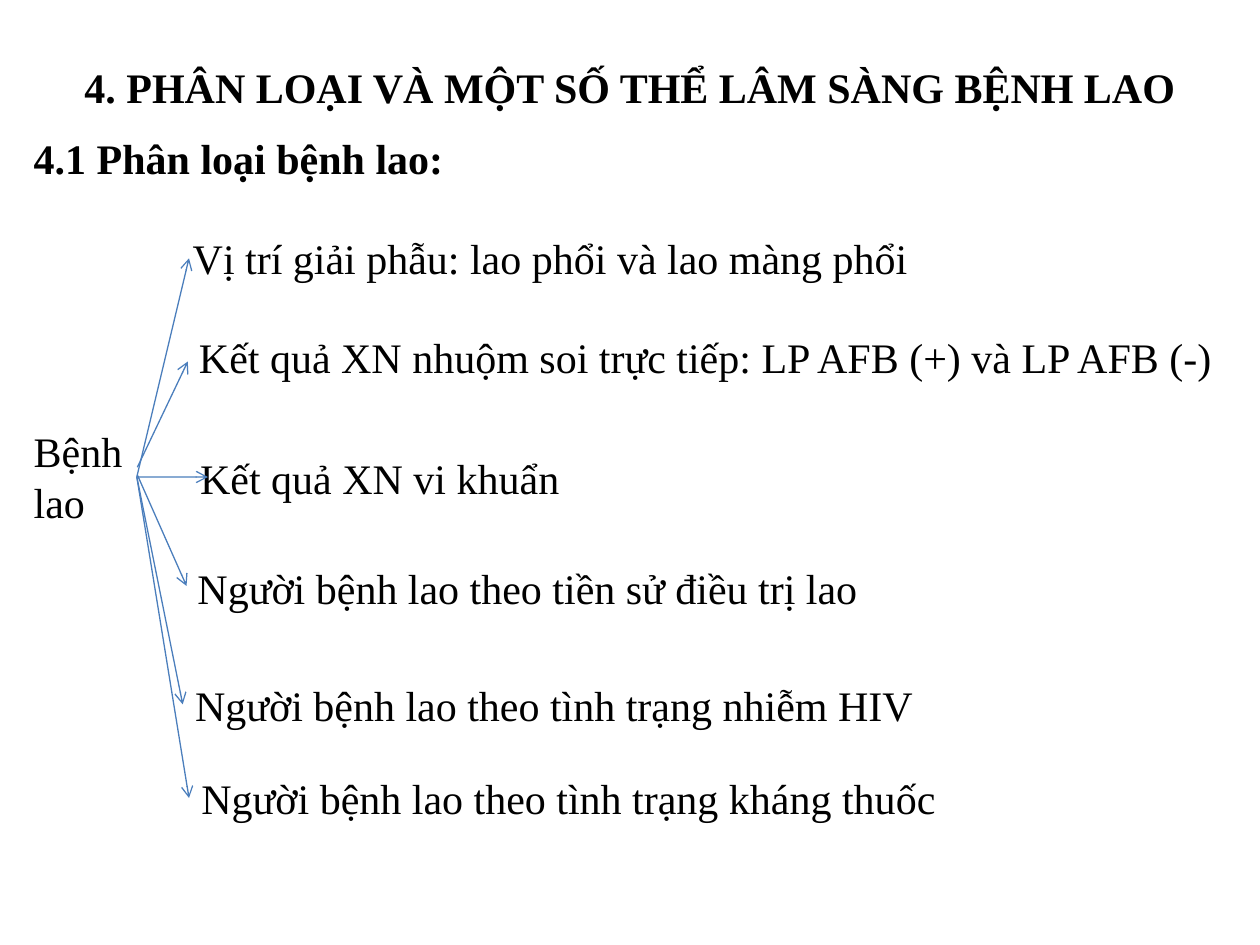
from lxml import etree
from pptx import Presentation
from pptx.dml.color import RGBColor
from pptx.enum.shapes import MSO_CONNECTOR
from pptx.enum.text import MSO_ANCHOR, MSO_AUTO_SIZE, PP_ALIGN
from pptx.oxml.ns import qn
from pptx.util import Pt

STRAIGHT = MSO_CONNECTOR.STRAIGHT
TOP, MIDDLE = MSO_ANCHOR.TOP, MSO_ANCHOR.MIDDLE
LEFT, CENTER = PP_ALIGN.LEFT, PP_ALIGN.CENTER
LEFT_SIDE, RIGHT_SIDE = 1, 3
TITLE_ONLY = 5

# Content
TITLE = "4. PHÂN LOẠI VÀ MỘT SỐ THỂ LÂM SÀNG BỆNH LAO"
SUBTITLE = "4.1 Phân loại bệnh lao:"
ROOT = "Bệnh lao"
# text, left, top, width, free arrow start and tip (None: joined to the box)
CRITERIA = [
    ("Vị trí giải phẫu: lao phổi và lao màng phổi", 103, 129.6, 480, None, (108, 147.6)),
    ("Kết quả XN nhuộm soi trực tiếp: LP AFB (+) và LP AFB (-)", 106.6, 185.8, 606,
     (78.5, 267), (107.3, 206.6)),
    ("Kết quả XN vi khuẩn", 107.3, 254.9, 546, None, (118.8, 272.6)),
    ("Người bệnh lao theo tiền sử điều trị lao", 105.8, 318.2, 504,
     (78.5, 271.4), (106.6, 334.8)),
    ("Người bệnh lao theo tình trạng nhiễm HIV", 104.4, 384.5, 534, None, None),
    ("Người bệnh lao theo tình trạng kháng thuốc", 108, 438, 516, None, None),
]
ROW_HEIGHT = 36
BLACK, BLUE = "000000", "4B7EBC"


def color(value):
    return RGBColor.from_string(value)


def write_text(shape, text, bold=False, align=LEFT, anchor=TOP):
    frame = shape.text_frame
    frame.word_wrap = True
    frame.auto_size = MSO_AUTO_SIZE.NONE
    frame.vertical_anchor = anchor
    paragraph = frame.paragraphs[0]
    paragraph.alignment = align
    run = paragraph.add_run()
    run.text = text
    run.font.name = "Times New Roman"
    run.font.size = Pt(24)
    run.font.bold = bold
    run.font.color.rgb = color(BLACK)


def add_label(slide, text, left, top, width, height=ROW_HEIGHT, **style):
    box = slide.shapes.add_textbox(Pt(left), Pt(top), Pt(width), Pt(height))
    write_text(box, text, **style)
    return box


def add_arrow(slide, source, target, start=None, tip=None):
    begin = [Pt(value) for value in start or (0, 0)]
    end = [Pt(value) for value in tip or (0, 0)]
    arrow = slide.shapes.add_connector(STRAIGHT, *begin, *end)
    if start is None:
        arrow.begin_connect(source, RIGHT_SIDE)
    if tip is None:
        arrow.end_connect(target, LEFT_SIDE)
    arrow.line.color.rgb = color(BLUE)
    arrow.line.width = Pt(0.75)
    properties = arrow.line._get_or_add_ln()
    etree.SubElement(properties, qn("a:tailEnd"), type="arrow")
    etree.SubElement(arrow._element.spPr, qn("a:effectLst"))


presentation = Presentation()
presentation.slide_width, presentation.slide_height = Pt(720), Pt(540)
slide = presentation.slides.add_slide(presentation.slide_layouts[TITLE_ONLY])

# Headings
title = slide.shapes.title
title.left, title.top, title.width, title.height = Pt(36), Pt(21.6), Pt(648), Pt(56.2)
write_text(title, TITLE, bold=True, align=CENTER, anchor=MIDDLE)
add_label(slide, SUBTITLE, 12.2, 72, 258, bold=True)

# Root and its six criteria
root = add_label(slide, ROOT, 12.2, 239.8, 66, 65.5)
for text, left, top, width, start, tip in CRITERIA:
    criterion = add_label(slide, text, left, top, width)
    add_arrow(slide, root, criterion, start, tip)

presentation.save("out.pptx")
